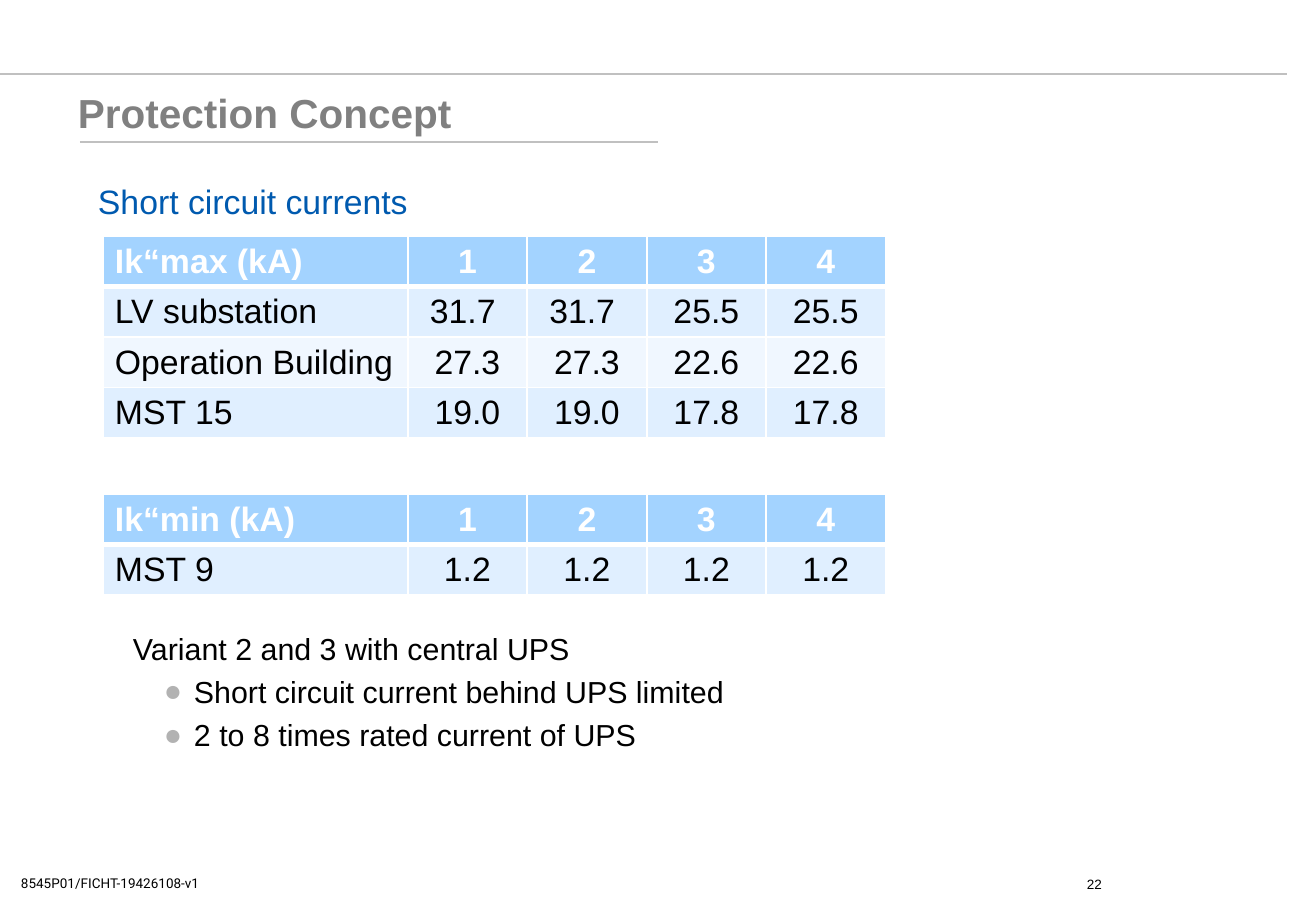
from lxml import etree
from pptx import Presentation
from pptx import util as u
from pptx.dml.color import RGBColor
from pptx.enum import shapes, text
from pptx.oxml import ns

SCALE = 7526  # EMU per px
FONT = "Arial"
BLACK, WHITE, GREY = "000000", "FFFFFF", "C0C0C0"
HEAD, BANDS = "A3D3FF", ("E0EFFF", "F0F7FF")


def px(n):
    return u.Emu(n * SCALE)


def rgb(code):
    return RGBColor.from_string(code)


def sub(node, tag, **attrs):
    return etree.SubElement(node, ns.qn(tag), attrs)


def add_run(para, words, size, color=BLACK, bold=False, face=FONT):
    run = para.add_run()
    run.text = words
    font = run.font
    font.name, font.size, font.bold = face, u.Pt(size), bold
    font.color.rgb = rgb(color)


def add_box(slide, x, y, w, h):
    frame = slide.shapes.add_textbox(px(x), px(y), px(w), px(h)).text_frame
    frame.word_wrap = True
    frame.margin_left = frame.margin_right = 0
    frame.margin_top = frame.margin_bottom = 0
    return frame


def add_label(slide, x, y, w, h, words, size, **style):
    add_run(add_box(slide, x, y, w, h).paragraphs[0], words, size, **style)


def add_rule(slide, x1, x2, y):
    rule = slide.shapes.add_connector(
        shapes.MSO_CONNECTOR.STRAIGHT, px(x1), px(y), px(x2), px(y))
    rule.line.color.rgb = rgb(GREY)
    rule.line.width = u.Pt(0.75)
    sub(rule._element.spPr, "a:effectLst")


def set_edge(cell, side, width):
    line = sub(cell._tc.get_or_add_tcPr(), "a:ln" + side, w=str(u.Pt(width)))
    sub(sub(line, "a:solidFill"), "a:srgbClr", val=WHITE)


def fill_cell(cell, words, row, col):
    top = row == 0
    cell.margin_left = cell.margin_right = px(12)
    cell.margin_top = cell.margin_bottom = px(5)
    cell.vertical_anchor = text.MSO_ANCHOR.MIDDLE
    para = cell.text_frame.paragraphs[0]
    para.alignment = text.PP_ALIGN.CENTER if col else text.PP_ALIGN.LEFT
    add_run(para, words, 20, WHITE if top else BLACK, top)
    # Borders come before the fill in the cell properties
    for side in "LRTB":
        thick = (top and side == "B") or (row == 1 and side == "T")
        set_edge(cell, side, 3 if thick else 1)
    cell.fill.solid()
    cell.fill.fore_color.rgb = rgb(HEAD if top else BANDS[(row - 1) % 2])


def add_grid(slide, x, y, rows):
    wide = [305, 119, 120, 119, 120]
    high = [49 + i % 2 for i in range(len(rows))]
    grid = slide.shapes.add_table(len(rows), len(wide), px(x), px(y),
                                  px(sum(wide)), px(sum(high))).table
    for col, size in zip(grid.columns, wide):
        col.width = px(size)
    for row, size in zip(grid.rows, high):
        row.height = px(size)
    for r, row in enumerate(rows):
        for c, words in enumerate(row):
            fill_cell(grid.cell(r, c), words, r, c)


def add_bullet(para):
    props = para._p.get_or_add_pPr()
    props.set("marL", str(px(61)))
    props.set("indent", str(px(-30)))
    sub(sub(props, "a:buClr"), "a:srgbClr", val="B2B2B2")
    sub(props, "a:buFont", typeface=FONT)
    sub(props, "a:buChar", char="●")


def add_notes(slide, x, y, lead, points):
    frame = add_box(slide, x, y, 900, 130)
    add_run(frame.paragraphs[0], lead, 18)
    for point in points:
        para = frame.add_paragraph()
        para.space_before = u.Pt(4)
        add_bullet(para)
        add_run(para, point, 18)


def main():
    deck = Presentation()
    deck.slide_width, deck.slide_height = px(1316), px(911)
    slide = deck.slides.add_slide(deck.slide_layouts[6])

    # Header
    add_rule(slide, 0, 1287, 74)
    add_rule(slide, 80, 658, 142)
    add_label(slide, 78, 88, 1080, 47, "Protection Concept", 24,
              color="808080", bold=True)
    add_label(slide, 98, 181, 1080, 39, "Short circuit currents", 20,
              color="005AAF")

    # Tables of currents
    add_grid(slide, 103, 236, [
        ["Ik“max (kA)", "1", "2", "3", "4"],
        ["LV substation", "31.7 ", "31.7 ", "25.5", "25.5"],
        ["Operation Building", "27.3", "27.3", "22.6", "22.6"],
        ["MST 15", "19.0", "19.0", "17.8", "17.8"],
    ])
    add_grid(slide, 103, 494, [
        ["Ik“min (kA)", "1", "2", "3", "4"],
        ["MST 9", "1.2", "1.2", "1.2", "1.2"],
    ])

    # Remarks
    add_notes(slide, 133, 630, "Variant 2 and 3 with central UPS", [
        "Short circuit current behind UPS limited",
        "2 to 8 times rated current of UPS",
    ])

    # Footer
    add_label(slide, 21, 875, 320, 20, "8545P01/FICHT-19426108-v1", 8,
              face="Roboto")
    add_label(slide, 1087, 876, 160, 20, "22", 8)

    deck.save("out.pptx")


if __name__ == "__main__":
    main()
